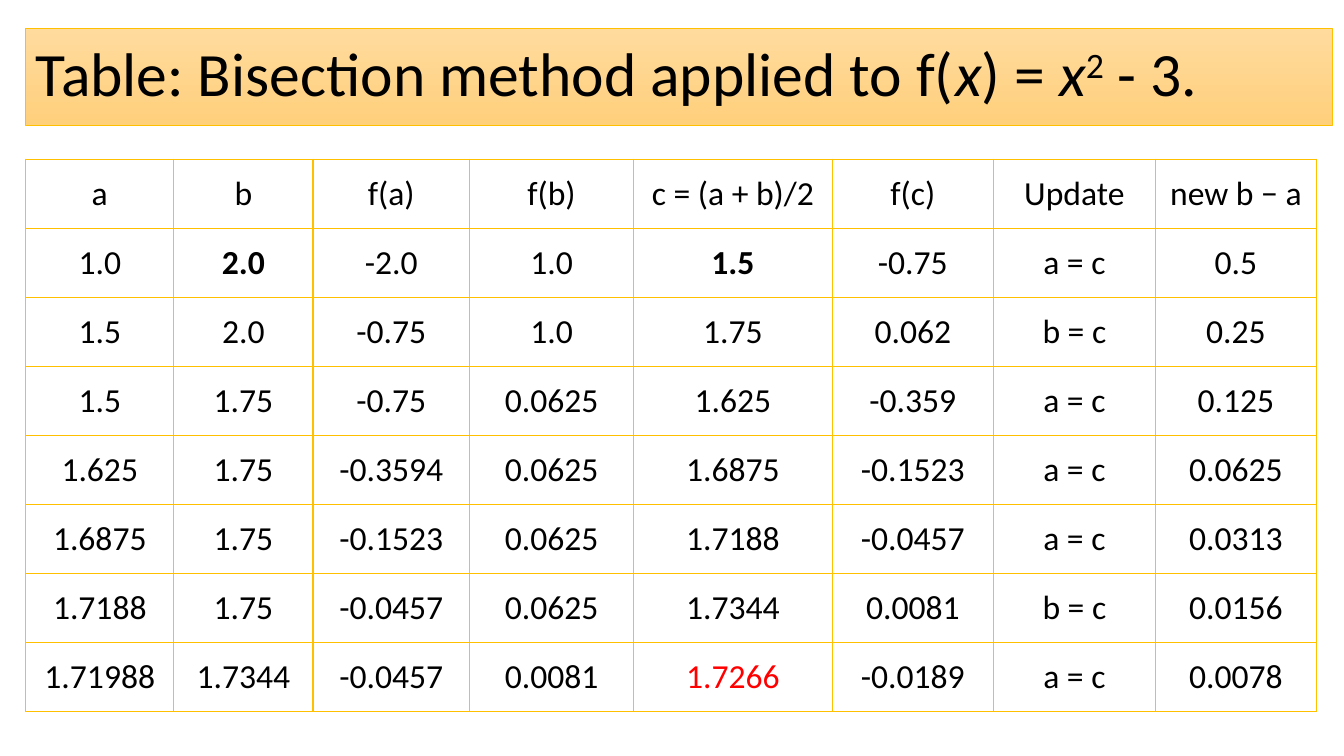
import lxml.etree
import pptx
import pptx.dml.color
import pptx.enum.text
import pptx.oxml.ns
import pptx.util

Cm = pptx.util.Cm
Pt = pptx.util.Pt
FONT = "Calibri"
COLORS = {
    "text": "000000",
    "result": "FF0000",
    "border": "FFC000",
    "title_top": "FFDB9E",
    "title_bottom": "FFD07C",
}
TITLE = [
    ("Table: Bisection method applied to f(", None),
    ("x", "italic"),
    (") = ", None),
    ("x", "italic"),
    ("2", "super"),
    (" - 3.", None),
]
ROWS = [
    ["a", "b", "f(a)", "f(b)", "c = (a + b)/2", "f(c)", "Update", "new b − a"],
    ["1.0", "2.0", "-2.0", "1.0", "1.5", "-0.75", "a = c", "0.5"],
    ["1.5", "2.0", "-0.75", "1.0", "1.75", "0.062", "b = c", "0.25"],
    ["1.5", "1.75", "-0.75", "0.0625", "1.625", "-0.359", "a = c", "0.125"],
    ["1.625", "1.75", "-0.3594", "0.0625", "1.6875", "-0.1523", "a = c", "0.0625"],
    ["1.6875", "1.75", "-0.1523", "0.0625", "1.7188", "-0.0457", "a = c", "0.0313"],
    ["1.7188", "1.75", "-0.0457", "0.0625", "1.7344", "0.0081", "b = c", "0.0156"],
    ["1.71988", "1.7344", "-0.0457", "0.0081", "1.7266", "-0.0189", "a = c", "0.0078"],
]
COLUMN_WIDTHS = [3.73, 3.51, 3.94, 4.14, 5, 4.07, 4.07, 4.07]
BOLD_CELLS = {(1, 1), (1, 4)}
RESULT_CELL = (7, 4)


def rgb(name):
    return pptx.dml.color.RGBColor.from_string(COLORS[name])


def format_font(font, size, color="text"):
    font.name = FONT
    font.size = Pt(size)
    font.color.rgb = rgb(color)


def add_title(s, left, top, width, height):
    sp = s.shapes.title
    sp.left, sp.top, sp.width, sp.height = Cm(left), Cm(top), Cm(width), Cm(height)
    sp.fill.gradient()
    sp.fill.gradient_angle = 270
    for stop, name in zip(sp.fill.gradient_stops, ("title_top", "title_bottom")):
        stop.color.rgb = rgb(name)
    sp.line.color.rgb = rgb("border")
    sp.line.width = Pt(0.5)
    tf = sp.text_frame
    tf.auto_size = pptx.enum.text.MSO_AUTO_SIZE.NONE
    tf.word_wrap = True
    tf.vertical_anchor = pptx.enum.text.MSO_ANCHOR.MIDDLE
    p = tf.paragraphs[0]
    p.alignment = pptx.enum.text.PP_ALIGN.LEFT
    p.line_spacing = 0.9
    for text, style in TITLE:
        r = p.add_run()
        r.text = text
        format_font(r.font, 44)
        r.font.italic = style == "italic"
        if style == "super":
            r.font._element.set("baseline", "30000")


def set_borders(cell):
    tc_pr = cell._tc.get_or_add_tcPr()
    qn = pptx.oxml.ns.qn
    for i, side in enumerate(("lnL", "lnR", "lnT", "lnB")):
        ln = lxml.etree.Element(qn("a:" + side), w=str(Pt(1)))
        fill = lxml.etree.SubElement(ln, qn("a:solidFill"))
        lxml.etree.SubElement(fill, qn("a:srgbClr"), val=COLORS["border"])
        tc_pr.insert(i, ln)


def add_bisection_table(s, left, top, width, height):
    frame = s.shapes.add_table(len(ROWS), len(ROWS[0]), Cm(left), Cm(top), Cm(width), Cm(height))
    table = frame.table
    table.first_row = False
    table.horz_banding = False
    for column, share in zip(table.columns, COLUMN_WIDTHS):
        column.width = Cm(width * share / sum(COLUMN_WIDTHS))
    for i, values in enumerate(ROWS):
        table.rows[i].height = Cm(height / len(ROWS))
        for j, value in enumerate(values):
            cell = table.cell(i, j)
            cell.fill.background()
            set_borders(cell)
            cell.vertical_anchor = pptx.enum.text.MSO_ANCHOR.MIDDLE
            p = cell.text_frame.paragraphs[0]
            p.text = value
            p.alignment = pptx.enum.text.PP_ALIGN.CENTER
            font = p.runs[0].font
            format_font(font, 24, "result" if (i, j) == RESULT_CELL else "text")
            font.bold = (i, j) in BOLD_CELLS


def main():
    prs = pptx.Presentation()
    prs.slide_width, prs.slide_height = Cm(33.87), Cm(19.05)
    s = prs.slides.add_slide(prs.slide_layouts.get_by_name("Title Only"))
    add_title(s, 0.65, 0.71, 32.92, 2.44)
    add_bisection_table(s, 0.65, 4.01, 32.53, 13.92)
    prs.save("out.pptx")


if __name__ == "__main__":
    main()
